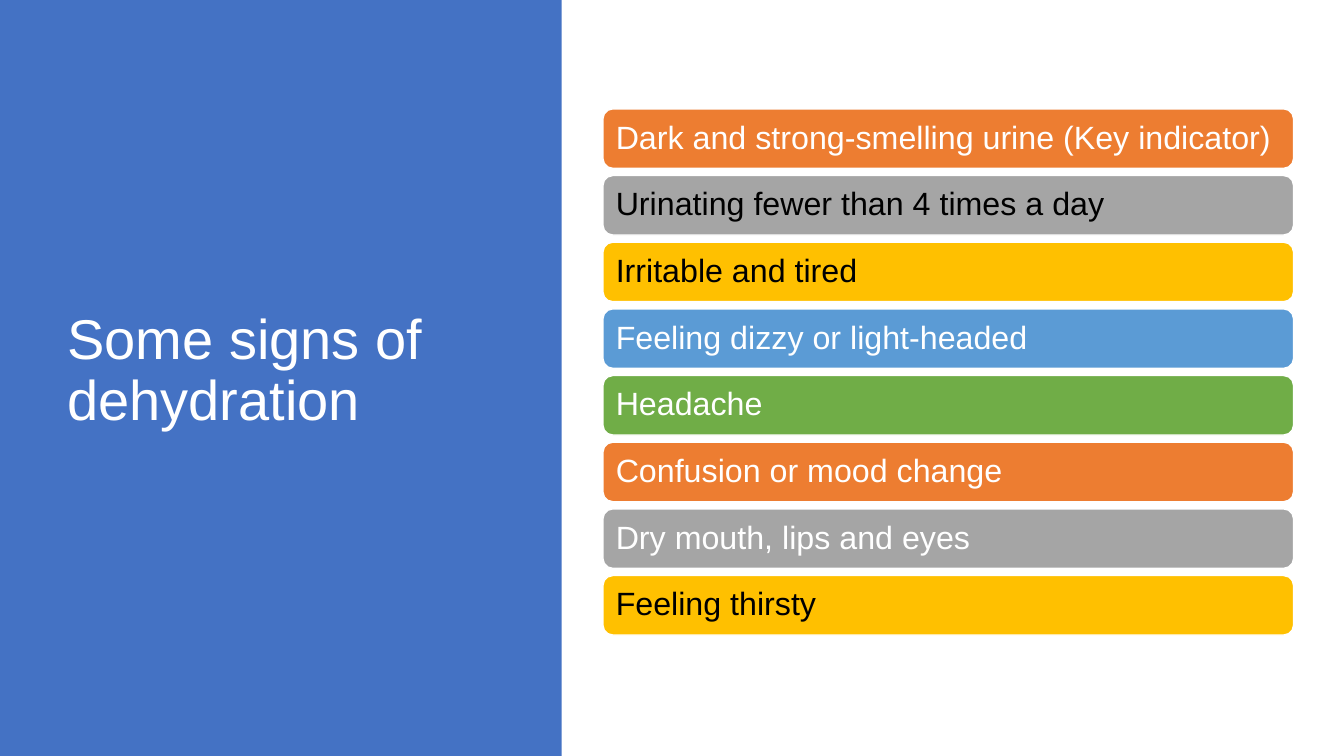
import pptx
import pptx.dml.color
import pptx.enum.shapes
import pptx.enum.text
import pptx.util

Inches = pptx.util.Inches
RGBColor = pptx.dml.color.RGBColor
Shapes = pptx.enum.shapes.MSO_SHAPE

WHITE = RGBColor(0xFF, 0xFF, 0xFF)
BLACK = RGBColor(0x00, 0x00, 0x00)
BLUE = RGBColor(0x44, 0x72, 0xC4)
ORANGE = RGBColor(0xED, 0x7D, 0x31)
GRAY = RGBColor(0xA5, 0xA5, 0xA5)
YELLOW = RGBColor(0xFF, 0xC0, 0x00)
LIGHT_BLUE = RGBColor(0x5B, 0x9B, 0xD5)
GREEN = RGBColor(0x70, 0xAD, 0x47)

SIGNS = [
    ("Dark and strong-smelling urine (Key indicator)", ORANGE, WHITE),
    ("Urinating fewer than 4 times a day", GRAY, BLACK),
    ("Irritable and tired", YELLOW, BLACK),
    ("Feeling dizzy or light-headed", LIGHT_BLUE, WHITE),
    ("Headache", GREEN, WHITE),
    ("Confusion or mood change", ORANGE, WHITE),
    ("Dry mouth, lips and eyes", GRAY, WHITE),
    ("Feeling thirsty", YELLOW, BLACK),
]
FIRST_TOP, LAST_TOP = 1.08, 5.71


class SlideBuilder:
    """Holds the text style and the slide being filled."""

    font_name = "Arial"
    line_spacing = 0.9

    def __init__(self, slide):
        self.slide = slide

    def set_text(self, shape, text, size, color):
        text_frame = shape.text_frame
        text_frame.text = text
        text_frame.word_wrap = True
        text_frame.vertical_anchor = pptx.enum.text.MSO_ANCHOR.MIDDLE
        paragraph = text_frame.paragraphs[0]
        paragraph.alignment = pptx.enum.text.PP_ALIGN.LEFT
        paragraph.line_spacing = self.line_spacing
        font = paragraph.runs[0].font
        font.name = self.font_name
        font.size = pptx.util.Pt(size)
        font.color.rgb = color

    def block(self, kind, left, top, width, height, fill):
        shape = self.slide.shapes.add_shape(
            kind, Inches(left), Inches(top), Inches(width), Inches(height))
        shape.shadow.inherit = False
        shape.fill.solid()
        shape.fill.fore_color.rgb = fill
        shape.line.fill.background()
        return shape

    def title(self, text, left, top, width, height):
        box = self.slide.shapes.add_textbox(
            Inches(left), Inches(top), Inches(width), Inches(height))
        self.set_text(box, text, 40, WHITE)

    def sign_bar(self, text, top, fill, text_color):
        bar = self.block(Shapes.ROUNDED_RECTANGLE, 5.98, top, 6.85, 0.59, fill)
        bar.line.color.rgb = WHITE
        bar.line.width = pptx.util.Pt(1)
        self.set_text(bar, text, 23, text_color)
        text_frame = bar.text_frame
        text_frame.margin_left = text_frame.margin_right = Inches(0.1)
        text_frame.margin_top = text_frame.margin_bottom = Inches(0.1)


def main():
    presentation = pptx.Presentation()
    presentation.slide_width = Inches(13.33)
    presentation.slide_height = Inches(7.5)
    builder = SlideBuilder(
        presentation.slides.add_slide(presentation.slide_layouts[6]))

    # Title panel
    builder.block(Shapes.RECTANGLE, 0, 0, 5.57, 7.5, BLUE)
    builder.title("Some signs of dehydration", 0.57, 0.68, 4.16, 6.02)

    # Evenly spaced list of signs
    pitch = (LAST_TOP - FIRST_TOP) / (len(SIGNS) - 1)
    for index, (text, fill, text_color) in enumerate(SIGNS):
        builder.sign_bar(text, FIRST_TOP + index * pitch, fill, text_color)

    presentation.save("out.pptx")


if __name__ == "__main__":
    main()
